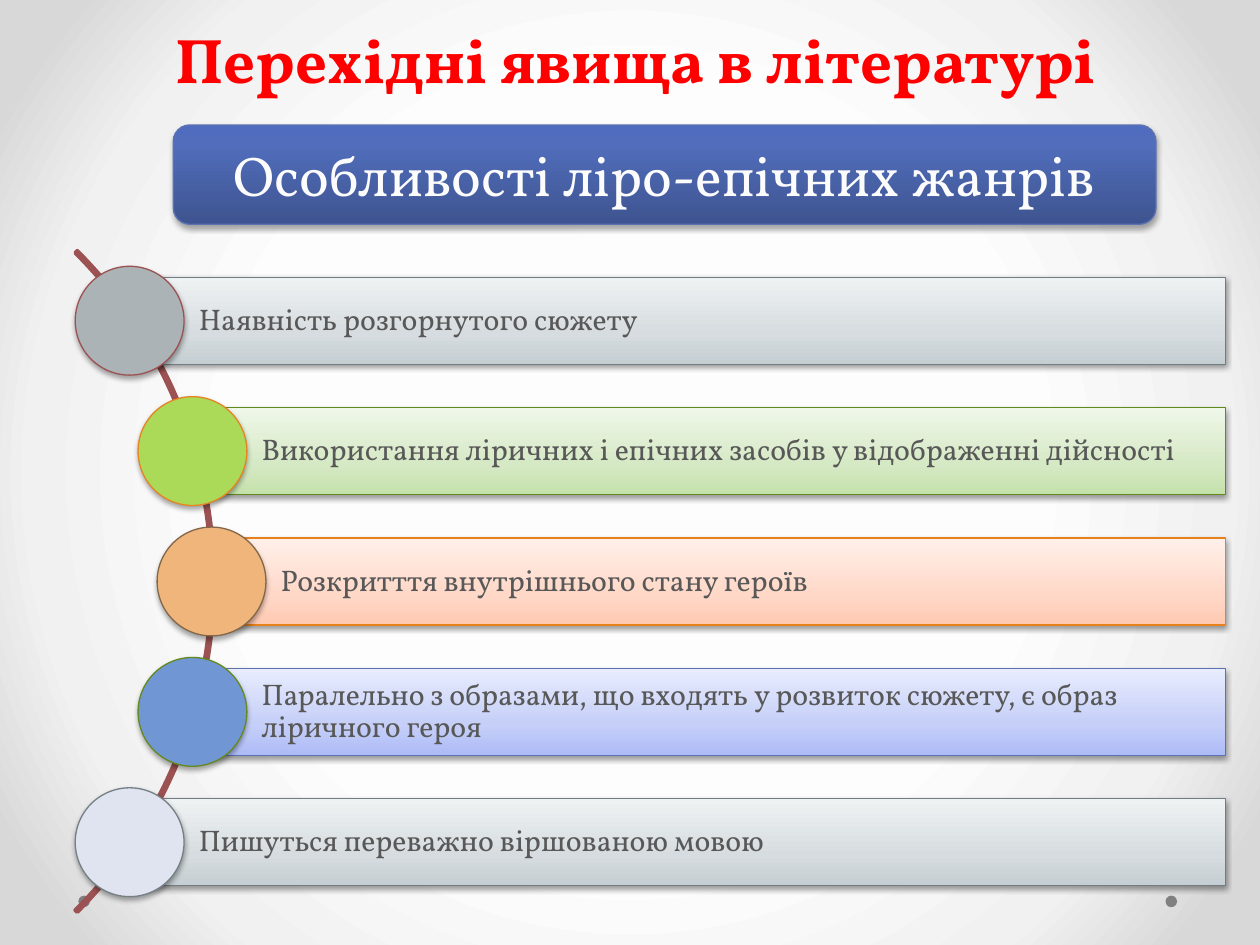
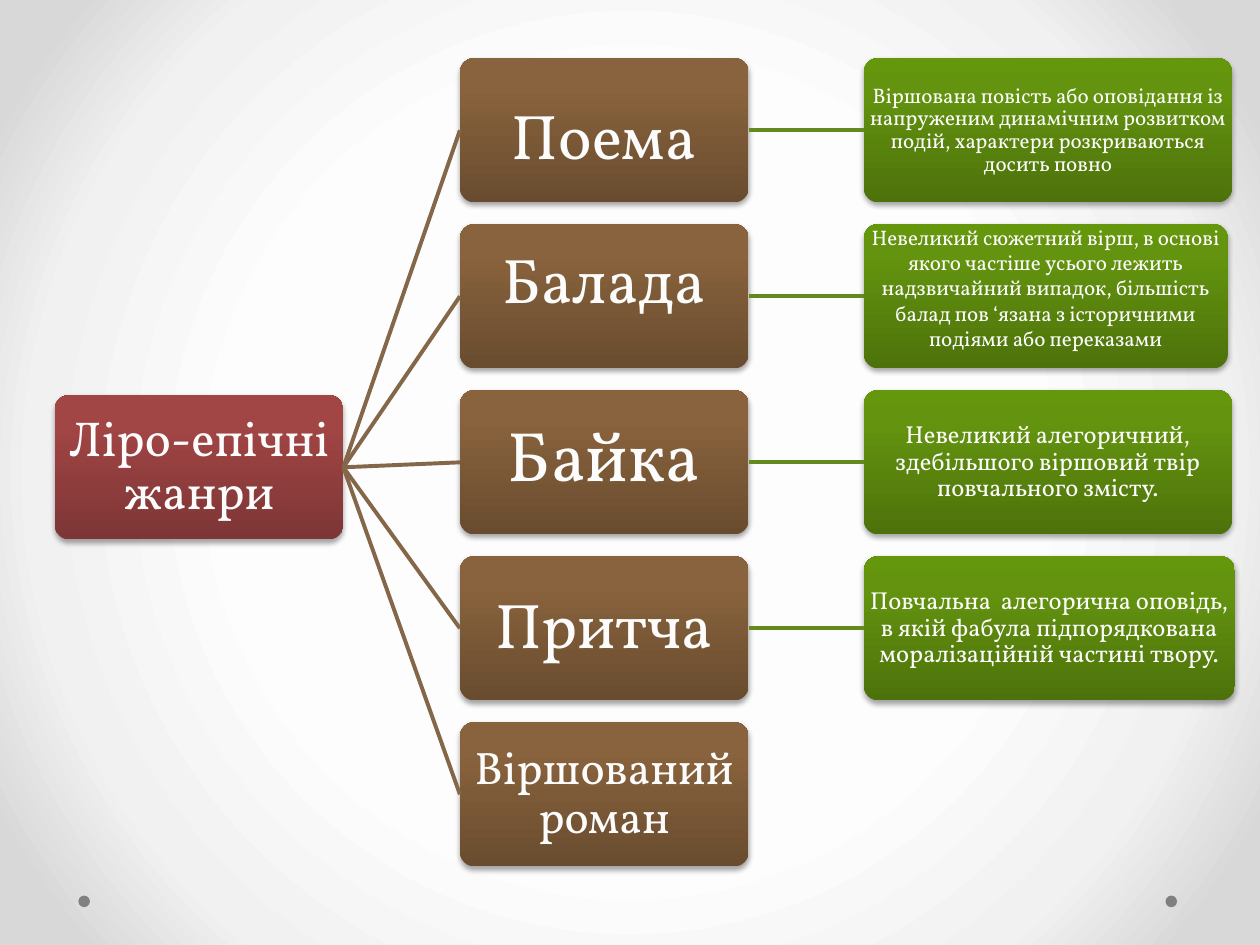
from copy import deepcopy
from math import sqrt

from lxml import etree
from pptx import Presentation
from pptx.dml.color import RGBColor
from pptx.enum import shapes, text
from pptx.oxml import ns
from pptx.util import Pt

# Content
TITLE = "Перехідні явища в літературі"
HEADER = "Особливості ліро-епічних жанрів"
ROOT = "Ліро-епічні жанри"


def rgb(code):
    return RGBColor.from_string(code)


# Colours; gradients run from bottom to top as (position, colour)
RED, WHITE, GREY_TEXT = rgb("FF0000"), rgb("FCFCFC"), rgb("585858")
DOT, ARC, BRANCH, LINK = rgb("808080"), rgb("9C5252"), rgb("846648"), rgb("63891F")
BACKDROP = [(0.5, rgb("FDFDFD")), (0.76, rgb("F1F1F1")), (0.92, rgb("D8D8D8"))]


def pale(*codes):
    return list(zip((0, 0.35, 1), map(rgb, codes)))


def deep(*codes):
    return list(zip((0, 0.8, 1), map(rgb, codes)))


GREY = pale("C5CED2", "D6DCDF", "EFF2F3")
GREEN = pale("C5E1AB", "D6E9C5", "EFF7E9")
ORANGE = pale("FFC9B1", "FFD8C8", "FFF0EA")
BLUE = pale("ADBBF6", "C5CFF8", "E8ECFD")
HEADER_BLUE = deep("3E5490", "516DBB", "4F6CBE")
ROOT_RED = deep("7D3535", "A24545", "A44343")
GENRE_BROWN = deep("694C2F", "89633D", "8B633C")
MEANING_GREEN = deep("4D720B", "64940F", "65970C")
HEADER_LINE = rgb("5C72B2")

# Feature, bar gradient, bar line, circle fill, circle line
FEATURES = [
    ("Наявність розгорнутого сюжету",
     GREY, rgb("727D82"), rgb("ACB3B6"), ARC),
    ("Використання ліричних і епічних засобів у відображенні дійсності",
     GREEN, rgb("62891C"), rgb("ABD958"), rgb("E68422")),
    ("Розкритття внутрішнього стану героїв",
     ORANGE, rgb("E6811C"), rgb("F0B57A"), BRANCH),
    ("Паралельно з образами, що входять у розвиток сюжету, є образ ліричного героя",
     BLUE, HEADER_LINE, rgb("7097D3"), LINK),
    ("Пишуться переважно віршованою мовою",
     GREY, rgb("727D82"), rgb("DFE4F0"), rgb("758085")),
]

# Genre: (name, size, downward shift), meaning: (words, size, shift, spacing, width)
GENRES = [
    (("Поема", 36, 5),
     ("Віршована повість або оповідання із напруженим динамічним розвитком "
      "подій, характери розкриваються досить повно", 12, 0, 0.9, 210.5)),
    (("Балада", 36, -7.5),
     ("Невеликий сюжетний вірш, в основі якого частіше усього лежить "
      "надзвичайний випадок, більшість балад пов ‘язана з історичними "
      "подіями або переказами", 12, -5, 1, 208)),
    (("Байка", 40, -2),
     ("Невеликий алегоричний, здебільшого віршовий твір повчального змісту.",
      14, 0, 0.9, 210.5)),
    (("Притча", 36, 0),
     ("Повчальна  алегорична оповідь, в якій фабула підпорядкована "
      "моралізаційній частині твору.", 14, 0, 0.9, 212)),
    (("Віршований роман", 26, 0), None),
]

FONT = "Vollkorn"
KIND = shapes.MSO_SHAPE
CENTER = text.PP_ALIGN.CENTER
RIGHT_SIDE, LEFT_SIDE = 3, 1


def fill_gradient(fill, element, stops, radial=False):
    fill.gradient()
    stop_list = element.find(".//" + ns.qn("a:gsLst"))
    while len(stop_list) < len(stops):
        stop_list.append(deepcopy(stop_list[-1]))
    for stop, (position, color) in zip(fill.gradient_stops, stops):
        stop.position = position
        stop.color.rgb = color
    if radial:
        linear = element.find(".//" + ns.qn("a:lin"))
        circle = etree.Element(ns.qn("a:path"), path="circle")
        etree.SubElement(circle, ns.qn("a:fillToRect"),
                         {side: "50000" for side in "ltrb"})
        linear.getparent().replace(linear, circle)
    else:
        fill.gradient_angle = 90


def add_shadow(shape, alpha, distance):
    effects = shape.element.spPr.find(ns.qn("a:effectLst"))
    shadow = etree.SubElement(effects, ns.qn("a:outerShdw"), {
        "blurRad": str(Pt(3.1)), "dist": str(Pt(distance)),
        "dir": "5400000", "rotWithShape": "0"})
    black = etree.SubElement(shadow, ns.qn("a:srgbClr"), val="000000")
    etree.SubElement(black, ns.qn("a:alpha"), val=str(alpha * 1000))


def add_figure(slide, kind, box, fill=None, line=None, width=0.75,
               shadow=(35, 1.8), radius=None):
    figure = slide.shapes.add_shape(kind, *map(Pt, box))
    figure.shadow.inherit = False
    if fill is None:
        figure.fill.background()
    elif isinstance(fill, list):
        fill_gradient(figure.fill, figure.element, fill)
    else:
        figure.fill.solid()
        figure.fill.fore_color.rgb = fill
    if line is None:
        figure.line.fill.background()
    else:
        figure.line.color.rgb = line
        figure.line.width = Pt(width)
    if shadow:
        add_shadow(figure, *shadow)
    if radius:
        figure.adjustments[0] = radius
    return figure


def write(shape, words, size, color, align=CENTER, spacing=0.9, bold=False,
          insets=(3.6, 3.6, 3.6, 3.6), anchor=text.MSO_ANCHOR.MIDDLE):
    frame = shape.text_frame
    frame.word_wrap = True
    frame.vertical_anchor = anchor
    (frame.margin_left, frame.margin_top,
     frame.margin_right, frame.margin_bottom) = map(Pt, insets)
    paragraph = frame.paragraphs[0]
    paragraph.alignment = align
    paragraph.line_spacing = spacing
    run = paragraph.add_run()
    run.text = words
    run.font.name, run.font.size, run.font.bold = FONT, Pt(size), bold
    run.font.color.rgb = color


def shifted(inset, shift):
    """Insets that move centred text down by the shift, or up if negative."""
    return (inset, inset + max(2 * shift, 0), inset, inset + max(-2 * shift, 0))


def join(slide, start, end, color):
    line = slide.shapes.add_connector(shapes.MSO_CONNECTOR.STRAIGHT, 0, 0, 0, 0)
    line.begin_connect(start, RIGHT_SIDE)
    line.end_connect(end, LEFT_SIDE)
    line.line.color.rgb = color
    line.line.width = Pt(2.25)
    etree.SubElement(line.element.spPr, ns.qn("a:effectLst"))


def new_slide(deck):
    slide = deck.slides.add_slide(deck.slide_layouts[6])
    fill_gradient(slide.background.fill, slide.element, BACKDROP, radial=True)
    for left in (666, 44.8):
        add_figure(slide, KIND.OVAL, (left, 511.8, 6.6, 6.6), DOT, shadow=None)
    return slide


def build_features(deck):
    slide = new_slide(deck)
    title = slide.shapes.add_textbox(Pt(20.2), Pt(3.6), Pt(686), Pt(54.7))
    write(title, TITLE, 36, RED, spacing=Pt(58), bold=True,
          insets=(7.2, 3.6, 7.2, 3.6), anchor=text.MSO_ANCHOR.BOTTOM)

    # Arc that the circles follow
    middle, arc_size = 332.3, 534.4
    arc = add_figure(slide, KIND.BLOCK_ARC,
                     (-412, middle - arc_size / 2, arc_size, arc_size),
                     line=ARC, width=2.25, shadow=None)
    for index, value in enumerate((189, 27, 0.003)):
        arc.adjustments[index] = value

    # Bars with their circles
    pitch, bar_height, bar_right, circle_size = 74.5, 49.7, 700.3, 62.2
    orbit_center, orbit_radius = -139.7, 260.6
    for index, (words, gradient, edge, disc, ring) in enumerate(FEATURES):
        drop = (index - (len(FEATURES) - 1) / 2) * pitch
        x = orbit_center + sqrt(orbit_radius ** 2 - drop ** 2)
        y = middle + drop
        bar = add_figure(slide, KIND.RECTANGLE,
                         (x, y - bar_height / 2, bar_right - x, bar_height),
                         gradient, edge, shadow=(38, 1.6))
        write(bar, words, 17, GREY_TEXT, text.PP_ALIGN.LEFT,
              insets=(39.5, 3.6, 3.6, 3.6))
        add_figure(slide, KIND.OVAL,
                   (x - circle_size / 2, y - circle_size / 2,
                    circle_size, circle_size), disc, ring)

    header = add_figure(slide, KIND.ROUNDED_RECTANGLE, (99, 71.4, 561.6, 56.8),
                        HEADER_BLUE, HEADER_LINE)
    write(header, HEADER, 32, WHITE, spacing=1, insets=(7.2, 3.6, 7.2, 3.6))


def build_genres(deck):
    slide = new_slide(deck)
    width, height, top, pitch = 165, 82.5, 33.2, 94.87
    root_left, genre_left, meaning_left = 31.2, 262.8, 493.6

    def add_card(left, y, card_width, gradient):
        return add_figure(slide, KIND.ROUNDED_RECTANGLE,
                          (left, y, card_width, height), gradient, radius=0.1)

    root = add_card(root_left, 225.8, width, ROOT_RED)
    write(root, ROOT, 28, WHITE, insets=shifted(1.4, 0))

    # One row for each genre
    for row, ((name, size, shift), meaning) in enumerate(GENRES):
        y = top + row * pitch
        genre = add_card(genre_left, y, width, GENRE_BROWN)
        write(genre, name, size, WHITE, insets=shifted(1.8, shift))
        join(slide, root, genre, BRANCH)
        if meaning:
            words, size, shift, spacing, card_width = meaning
            card = add_card(meaning_left, y, card_width, MEANING_GREEN)
            write(card, words, size, WHITE, spacing=spacing,
                  insets=shifted(0.7, shift))
            join(slide, genre, card, LINK)


def main():
    deck = Presentation()
    deck.slide_width, deck.slide_height = Pt(720), Pt(540)
    build_features(deck)
    build_genres(deck)
    deck.save("out.pptx")


if __name__ == "__main__":
    main()
